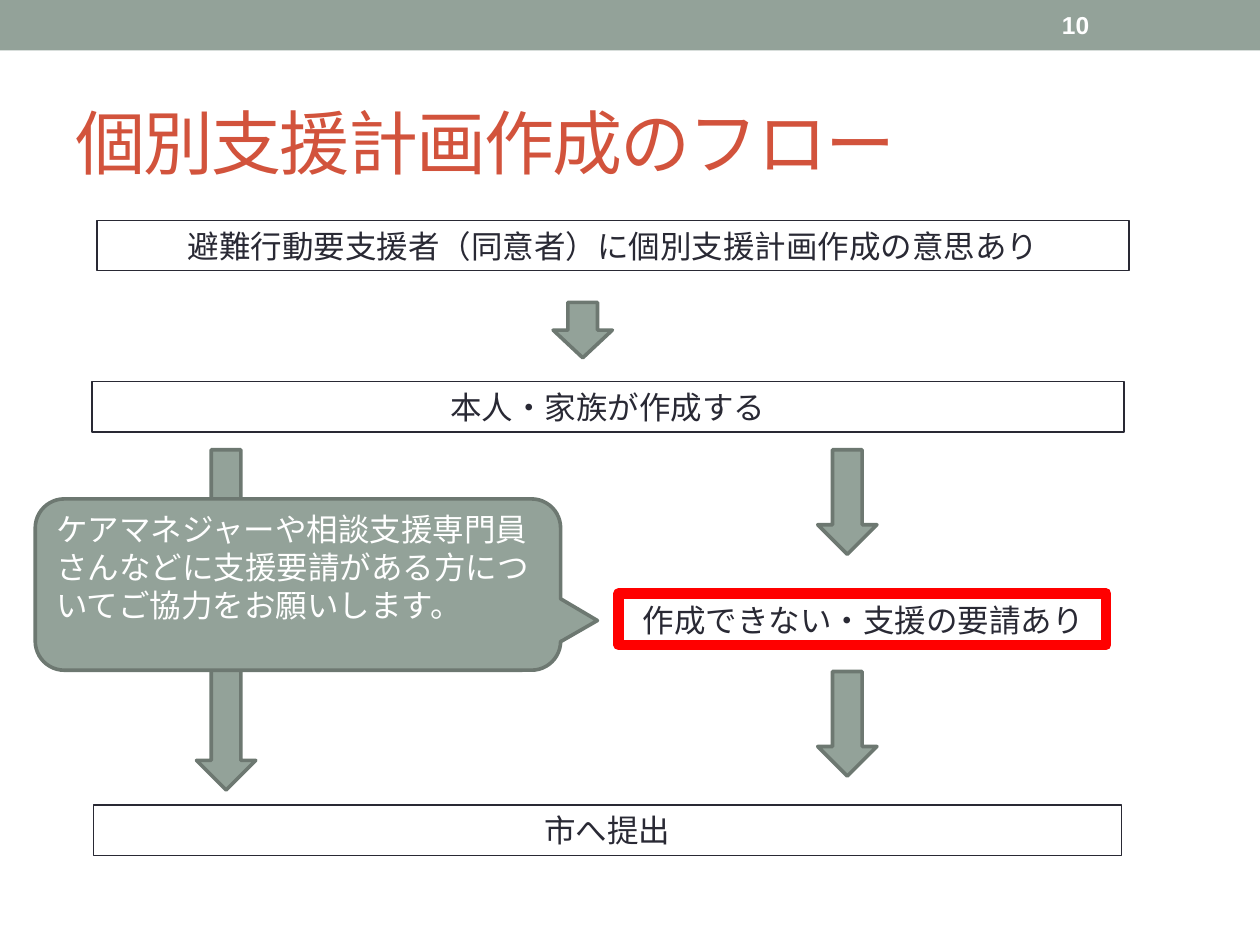
import pptx
import pptx.dml.color
import pptx.enum.shapes
import pptx.enum.text
import pptx.oxml
import pptx.oxml.ns
import pptx.util

Inches = pptx.util.Inches
Pt = pptx.util.Pt
Shape = pptx.enum.shapes.MSO_SHAPE
Align = pptx.enum.text.PP_ALIGN
Anchor = pptx.enum.text.MSO_ANCHOR

SAGE, SAGE_DARK = "93A299", "6D7871"
INK, WHITE, RED, TITLE_RED = "292934", "FFFFFF", "FF0000", "D2533C"
JAPANESE, LATIN = "Noto Sans CJK JP", "Arial"


def color(value):
    return pptx.dml.color.RGBColor.from_string(value)


def write(frame, text, size=18, font=JAPANESE, ink=INK, bold=False,
          align=Align.LEFT, anchor=Anchor.MIDDLE, spacing=None):
    """Fill a text frame with one formatted paragraph; spacing is in points."""
    frame.word_wrap = True
    frame.vertical_anchor = anchor
    para = frame.paragraphs[0]
    para.alignment = align
    span = para.add_run()
    span.text = text
    span.font.size = Pt(size)
    span.font.name = font
    span.font.bold = bold
    span.font.color.rgb = color(ink)
    properties = span.font._element
    east_asian = pptx.oxml.parse_xml(
        f'<a:ea {pptx.oxml.ns.nsdecls("a")} typeface="{font}"/>')
    properties.find(pptx.oxml.ns.qn("a:latin")).addnext(east_asian)
    if spacing is not None:
        properties.set("spc", str(int(spacing * 100)))


class FlowSlide:
    """Holds the slide and the style shared by its elements."""

    arrow_width = 0.47
    step_height = 0.4
    outline = 2.08

    def __init__(self, deck):
        self.slide = deck.slides.add_slide(deck.slide_layouts[6])

    def shape(self, kind, left, top, width, height, fill=None, line=None, weight=0.75):
        shape = self.slide.shapes.add_shape(
            kind, Inches(left), Inches(top), Inches(width), Inches(height))
        shape.shadow.inherit = False
        if fill:
            shape.fill.solid()
            shape.fill.fore_color.rgb = color(fill)
        else:
            shape.fill.background()
        if line:
            shape.line.color.rgb = color(line)
            shape.line.width = Pt(weight)
        else:
            shape.line.fill.background()
        return shape

    def label(self, text, left, top, width, height, **style):
        box = self.slide.shapes.add_textbox(
            Inches(left), Inches(top), Inches(width), Inches(height))
        write(box.text_frame, text, **style)

    def step(self, text, left, top, width):
        box = self.shape(Shape.RECTANGLE, left, top, width, self.step_height, line=INK)
        write(box.text_frame, text, align=Align.CENTER, anchor=Anchor.TOP)

    def arrow(self, left, top, height):
        self.shape(Shape.DOWN_ARROW, left, top, self.arrow_width, height,
                   SAGE, SAGE_DARK, self.outline)

    def callout(self, text, left, top, width, height, adjustments):
        bubble = self.shape(Shape.ROUNDED_RECTANGULAR_CALLOUT, left, top, width, height,
                            SAGE, SAGE_DARK, self.outline)
        for index, value in enumerate(adjustments):
            bubble.adjustments[index] = value
        bubble.text_frame.margin_top = Inches(0.02)
        write(bubble.text_frame, text, ink=WHITE, anchor=Anchor.TOP)


def main():
    deck = pptx.Presentation()
    deck.slide_width, deck.slide_height = Inches(10), Inches(7.5)
    flow = FlowSlide(deck)

    flow.shape(Shape.RECTANGLE, 0, 0, 10, 0.4, SAGE)
    flow.label("個別支援計画作成のフロー", 0.5, 0.58, 9, 1.08,
               size=40, ink=TITLE_RED, spacing=-1)
    flow.label("10", 8.33, 0.02, 1.17, 0.36, size=14, font=LATIN, ink=WHITE, bold=True)

    for text, left, top, width in (
        ("避難行動要支援者（同意者）に個別支援計画作成の意思あり", 0.77, 1.75, 8.19),
        ("本人・家族が作成する", 0.73, 3.03, 8.19),
        ("作成できない・支援の要請あり", 4.91, 4.72, 3.88),
        ("市へ提出", 0.74, 6.39, 8.16),
    ):
        flow.step(text, left, top, width)

    for left, top, height in (
        (4.39, 2.4, 0.44),
        (6.49, 3.57, 0.83),
        (1.56, 3.57, 2.7),
        (6.49, 5.33, 0.83),
    ):
        flow.arrow(left, top, height)

    flow.shape(Shape.RECTANGLE, 4.91, 4.71, 3.87, 0.41, line=RED, weight=6)
    flow.callout("ケアマネジャーや相談支援専門員さんなどに支援要請がある方についてご協力をお願いします。",
                 0.28, 3.96, 4.17, 1.36, (0.57, 0.21, 0.17))

    deck.save("out.pptx")


if __name__ == "__main__":
    main()
